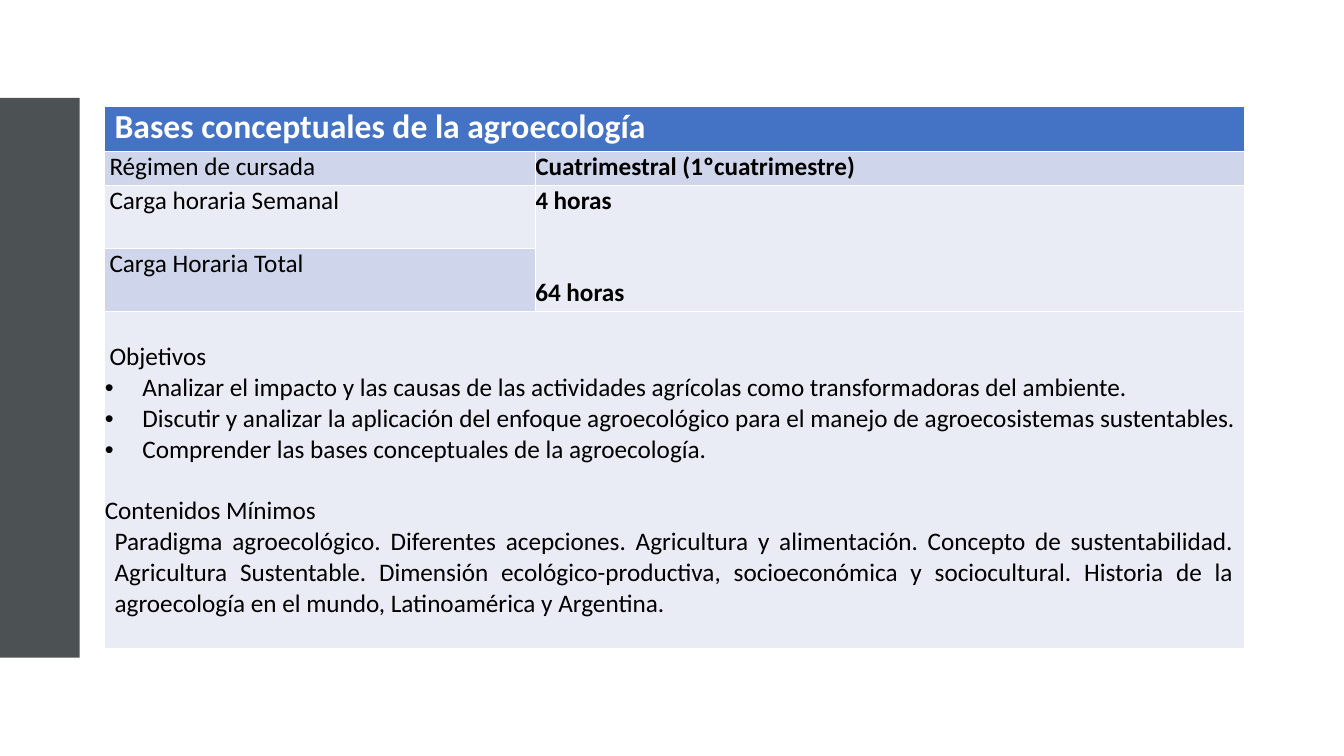
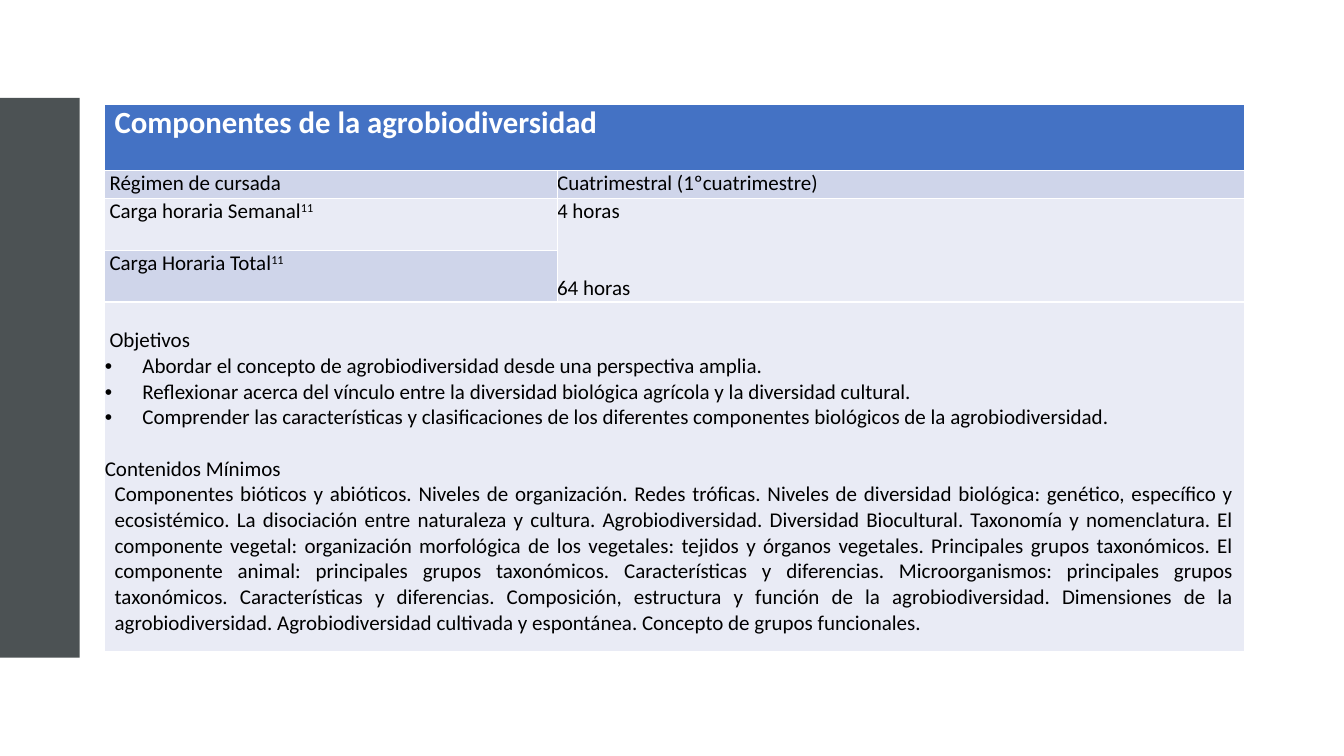
from pptx import Presentation
from pptx.dml.color import RGBColor
from pptx.enum.shapes import MSO_SHAPE as Shape
from pptx.enum.text import PP_ALIGN as Align
from pptx.oxml.ns import qn
from pptx.util import Cm, Pt
from lxml.etree import SubElement

# Shared style
FONT = "Calibri"
WHITE = RGBColor(0xFF, 0xFF, 0xFF)
BLACK = RGBColor(0x00, 0x00, 0x00)
SLATE = RGBColor(0x4C, 0x52, 0x54)
BLUE = RGBColor(0x44, 0x72, 0xC4)
DARK_ROW = RGBColor(0xCF, 0xD5, 0xEA)
LIGHT_ROW = RGBColor(0xE9, 0xEB, 0xF5)
ROW_FILLS = [BLUE, DARK_ROW, LIGHT_ROW, DARK_ROW, LIGHT_ROW]
LINE_HEIGHT = 1.22
TABLE_LEFT, TABLE_WIDTH = 2.64, 28.73
LABEL_INDENT, TEXT_INDENT, BULLET_INDENT = 0.12, 0.25, 0.95

# Contents of the two courses
COURSES = [
    dict(
        title="Bases conceptuales de la agroecología",
        title_size=24, size=18, bold_values=True, note="",
        top=2.69, label_width=10.85, heights=[1.12, 0.86, 1.6, 1.57, 8.51],
        goals=[
            "Analizar el impacto y las causas de las actividades agrícolas como "
            "transformadoras del ambiente.",
            "Discutir y analizar la aplicación del enfoque agroecológico para el "
            "manejo de agroecosistemas sustentables.",
            "Comprender las bases conceptuales de la agroecología.",
        ],
        contents="Paradigma agroecológico. Diferentes acepciones. Agricultura y "
        "alimentación. Concepto de sustentabilidad. Agricultura Sustentable. "
        "Dimensión ecológico-productiva, socioeconómica y sociocultural. Historia "
        "de la agroecología en el mundo, Latinoamérica y Argentina.",
    ),
    dict(
        title="Componentes de la agrobiodiversidad",
        title_size=22, size=15, bold_values=False, note="11",
        top=2.62, label_width=11.4, heights=[1.68, 0.71, 1.3, 1.3, 8.81],
        goals=[
            "Abordar el concepto de agrobiodiversidad desde una perspectiva amplia.",
            "Reflexionar acerca del vínculo entre la diversidad biológica agrícola y "
            "la diversidad cultural.",
            "Comprender las características y clasificaciones de los diferentes "
            "componentes biológicos de la agrobiodiversidad.",
        ],
        contents="Componentes bióticos y abióticos. Niveles de organización. Redes "
        "tróficas. Niveles de diversidad biológica: genético, específico y "
        "ecosistémico. La disociación entre naturaleza y cultura. Agrobiodiversidad. "
        "Diversidad Biocultural. Taxonomía y nomenclatura. El componente vegetal: "
        "organización morfológica de los vegetales: tejidos y órganos vegetales. "
        "Principales grupos taxonómicos. El componente animal: principales grupos "
        "taxonómicos. Características y diferencias. Microorganismos: principales "
        "grupos taxonómicos. Características y diferencias. Composición, estructura "
        "y función de la agrobiodiversidad. Dimensiones de la agrobiodiversidad. "
        "Agrobiodiversidad cultivada y espontánea. Concepto de grupos funcionales.",
    ),
]


class CourseDeck:
    def __init__(self):
        self.deck = Presentation()
        self.deck.slide_width, self.deck.slide_height = Cm(33.87), Cm(19.05)
        self.page = None

    def add_page(self):
        self.page = self.deck.slides.add_slide(self.deck.slide_layouts[6])
        self.add_band()

    def add_band(self):
        band = self.page.shapes.add_shape(
            Shape.RECTANGLE, Cm(0), Cm(2.47), Cm(2.01), Cm(14.1))
        band.shadow.inherit = False
        band.fill.solid()
        band.fill.fore_color.rgb = SLATE
        band.line.fill.background()

    def add_grid(self, top, label_width, heights):
        """Add the filled table, whose white rules come from its table style."""
        grid = self.page.shapes.add_table(
            len(heights), 2, Cm(TABLE_LEFT), Cm(top),
            Cm(TABLE_WIDTH), Cm(sum(heights))).table
        grid.columns[0].width = Cm(label_width)
        grid.columns[1].width = Cm(TABLE_WIDTH - label_width)
        for row, height, color in zip(grid.rows, heights, ROW_FILLS):
            row.height = Cm(height)
            for cell in row.cells:
                cell.fill.solid()
                cell.fill.fore_color.rgb = color
                cell.margin_left = cell.margin_right = 0
                cell.margin_top = cell.margin_bottom = 0
        for first, last in [((0, 0), (0, 1)), ((2, 1), (3, 1)), ((4, 0), (4, 1))]:
            grid.cell(*first).merge(grid.cell(*last))
        return grid

    def add_text(self, cell, text, size, color=BLACK, bold=False, indent=0.0,
                 align=Align.LEFT, lines_before=0, note="", bullet=False, right=0.0):
        """Write the next paragraph of a cell; lengths are in centimetres."""
        frame = cell.text_frame
        para = frame.add_paragraph() if frame.text else frame.paragraphs[0]
        para.text = text
        para.alignment = align
        if lines_before:
            para.space_before = Pt(round(lines_before * size * LINE_HEIGHT, 1))
        if note:
            span = para.add_run()
            span.text = note
            span.font._element.set("baseline", "30000")
        for span in para.runs:
            font = span.font
            font.name, font.size, font.bold = FONT, Pt(size), bold
            font.color.rgb = color
        props = para._p.get_or_add_pPr()
        props.set("marL", str(Cm(indent)))
        props.set("marR", str(Cm(right)))
        props.set("indent", str(-Cm(indent) if bullet else 0))
        if bullet:
            SubElement(props, qn("a:buFont"), typeface="Arial")
            SubElement(props, qn("a:buChar"), char="•")

    def add_course(self, title, title_size, size, bold_values, note, top,
                   label_width, heights, goals, contents):
        self.add_page()
        grid = self.add_grid(top, label_width, heights)
        self.add_text(grid.cell(0, 0), title, title_size, WHITE, True, TEXT_INDENT)

        # Schedule
        labels = [("Régimen de cursada", ""), ("Carga horaria Semanal", note),
                  ("Carga Horaria Total", note)]
        for row, (label, mark) in enumerate(labels, start=1):
            self.add_text(grid.cell(row, 0), label, size, indent=LABEL_INDENT, note=mark)
        values = [(1, "Cuatrimestral (1ºcuatrimestre)", 0), (2, "4 horas", 0),
                  (2, "64 horas", 2)]
        for row, value, gap in values:
            self.add_text(grid.cell(row, 1), value, size, bold=bold_values,
                          lines_before=gap)

        # Goals and contents
        body = grid.cell(4, 0)
        body.margin_top = Pt(round(size * LINE_HEIGHT, 1))
        self.add_text(body, "Objetivos", size, indent=LABEL_INDENT)
        for goal in goals:
            self.add_text(body, goal, size, indent=BULLET_INDENT,
                          align=Align.JUSTIFY, bullet=True)
        self.add_text(body, "Contenidos Mínimos", size, lines_before=1)
        self.add_text(body, contents, size, indent=TEXT_INDENT,
                      align=Align.JUSTIFY, right=0.28)


def main():
    courses = CourseDeck()
    for course in COURSES:
        courses.add_course(**course)
    courses.deck.save("out.pptx")


if __name__ == "__main__":
    main()
